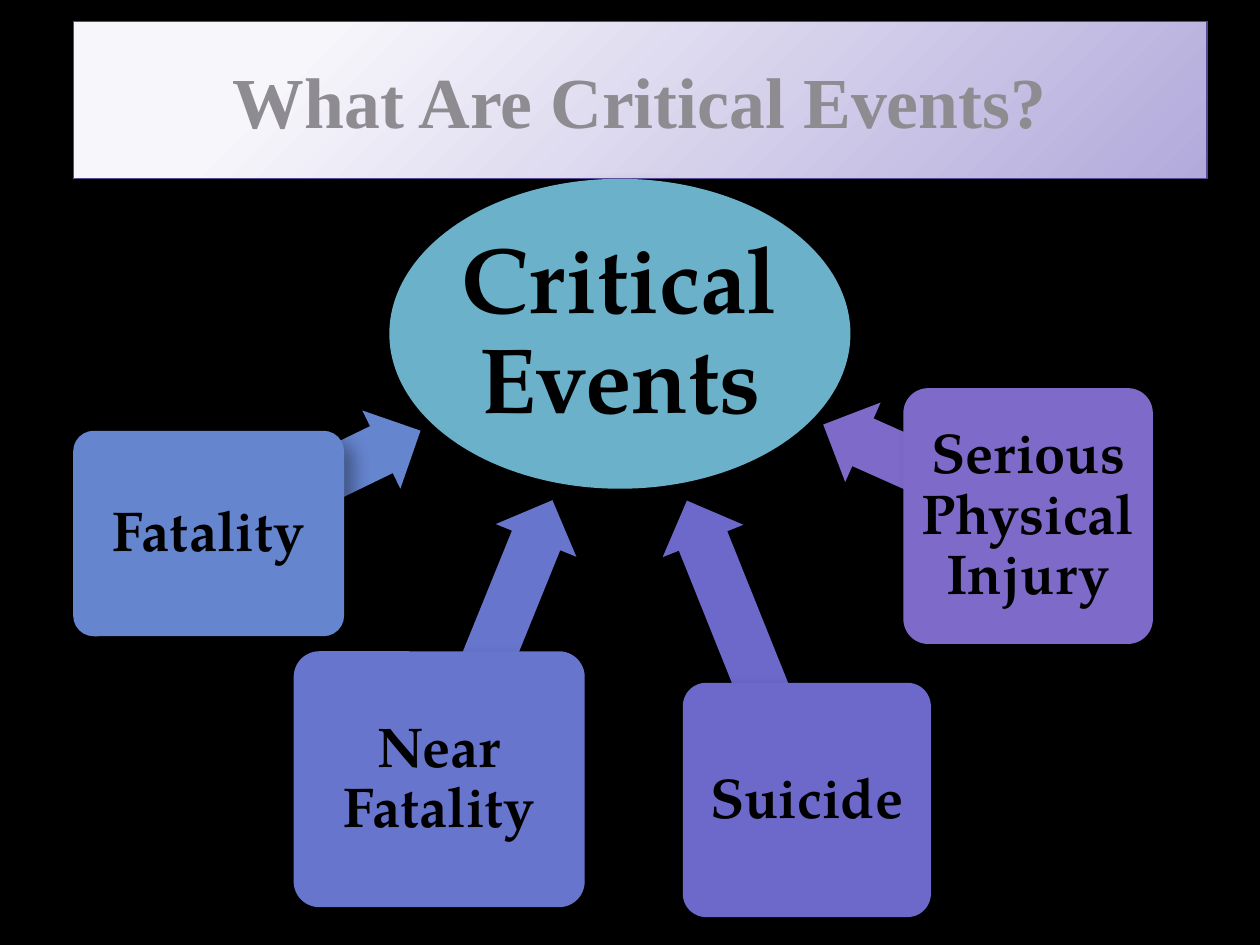
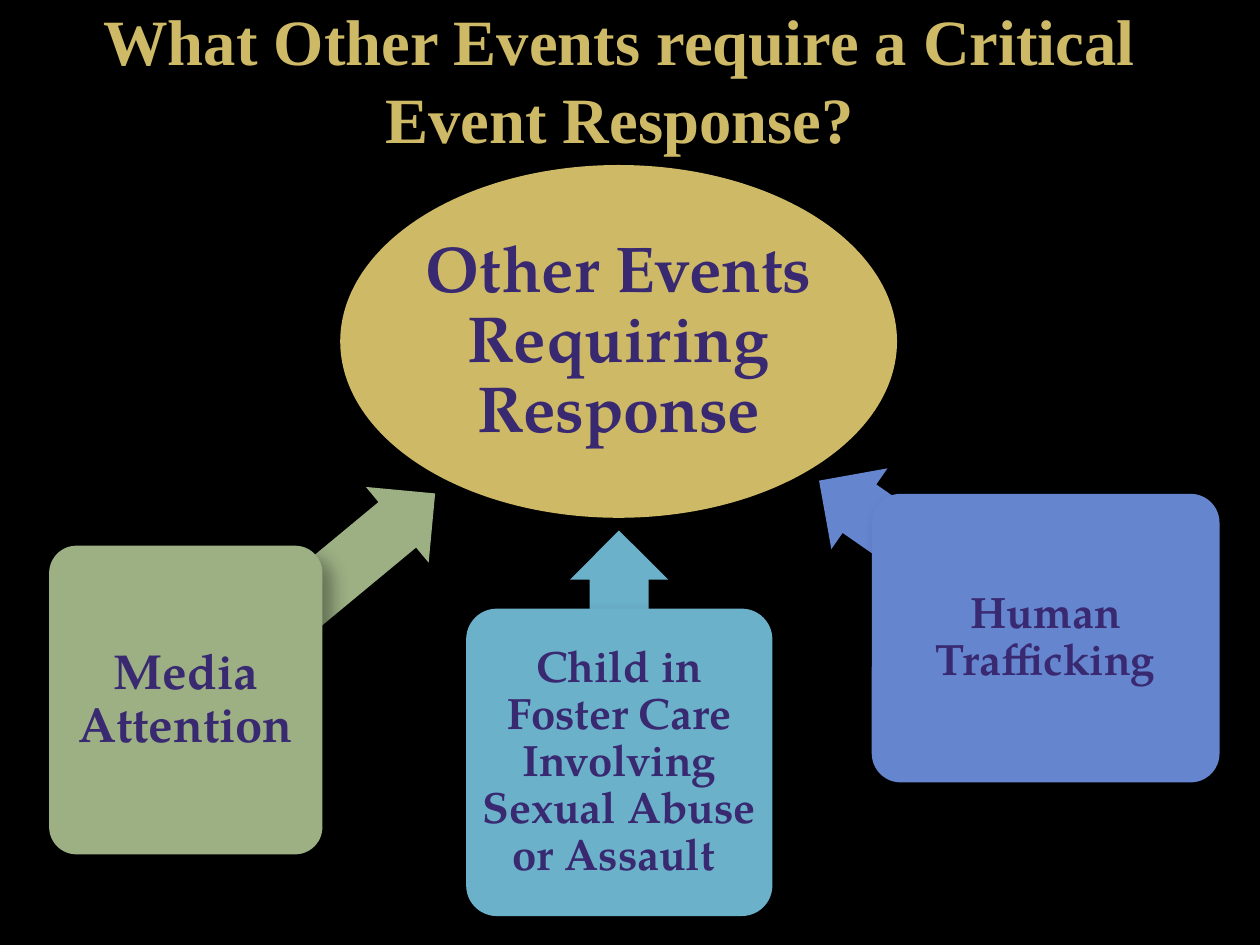
import math

import lxml.etree
import pptx
import pptx.dml.color
import pptx.enum.shapes
import pptx.enum.text
import pptx.oxml.ns
import pptx.util

Pt = pptx.util.Pt
SHAPES = pptx.enum.shapes.MSO_SHAPE

BACKGROUND = "000000"
TITLE_FONT = "Times New Roman"
DIAGRAM_FONT = "TeX Gyre Pagella"
TITLE_SIZE = (648, 90)
HUB_INSET, CARD_INSET = 0, 0.16  # shares of the font size

# Opacity in percent, blur and distance in points
CARD_SHADOW = (35, 10.2, 8)
ARROW_SHADOW = (26, 15, 18)

# Boxes are left, top, width, height. An arrow runs from its card's centre
# towards the hub's centre and has the given length.
SLIDES = [
    {
        "title": {"text": "What Are Critical Events?", "at": (41.8, 12.2),
                  "size": 41, "color": "8E8C91",
                  "band": {"stops": [(0.2, "F7F6FB"), (1, "B2AADB")], "line": "5A4A96"}},
        "text_color": "000000",
        "arrow_thickness": 49.7,
        "hub": {"text": "Critical Events", "box": (222.5, 102.2, 263.5, 177.1),
                "size": 53, "fill": "6BB1C9"},
        "cards": [
            {"text": "Fatality", "box": (41.8, 246.2, 154.8, 117.4),
             "size": 32, "fill": "6585CF", "arrow": 134.6},
            {"text": "Near Fatality", "box": (167.8, 372.2, 166.3, 146.2),
             "size": 32, "fill": "6775CD", "arrow": 172.1},
            {"text": "Suicide", "box": (390.2, 390.2, 141.8, 133.9),
             "size": 32, "fill": "6C69CB", "arrow": 184.3},
            {"text": "Serious Physical Injury", "box": (516.2, 221.8, 142.6, 146.2),
             "size": 32, "fill": "7E6BC9", "arrow": 128.2},
        ],
    },
    {
        "title": {"text": "What Other Events require a Critical Event Response?",
                  "at": (30.2, 0), "size": 36.9, "color": "CEB966", "band": None},
        "text_color": "382971",
        "arrow_thickness": 56.2,
        "hub": {"text": "Other Events Requiring Response",
                "box": (194.4, 94.3, 318.2, 201.6), "size": 37, "fill": "CEB966"},
        "cards": [
            {"text": "Media Attention", "box": (28.1, 311.8, 156.2, 176.4),
             "size": 28, "fill": "9CB084", "arrow": 185},
            {"text": "Child in Foster Care Involving Sexual Abuse or Assault ",
             "box": (266.4, 347.8, 175, 175.7),
             "size": 25, "fill": "6BB1C9", "arrow": 132.5},
            {"text": "Human Trafficking", "box": (498.2, 282.2, 198.7, 164.9),
             "size": 25, "fill": "6585CF", "arrow": 157.7},
        ],
    },
]


def rgb(color):
    return pptx.dml.color.RGBColor.from_string(color)


def add_child(parent, tag, **attributes):
    child = lxml.etree.SubElement(parent, pptx.oxml.ns.qn(tag))
    for name, value in attributes.items():
        child.set(name, str(value))
    return child


def set_shadow(shape, opacity, blur, distance):
    """Cast a black shadow to the lower right."""
    shape.shadow.inherit = False
    effects = shape._element.spPr.find(pptx.oxml.ns.qn("a:effectLst"))
    shadow = add_child(effects, "a:outerShdw", blurRad=int(Pt(blur)), dist=int(Pt(distance)),
                       dir=45 * 60000, algn="tl", rotWithShape=0)
    color = add_child(shadow, "a:srgbClr", val="000000")
    add_child(color, "a:alpha", val=opacity * 1000)


def write_text(shape, text, font_name, size, color, line_spacing):
    frame = shape.text_frame
    frame.text = text
    frame.word_wrap = True
    frame.auto_size = pptx.enum.text.MSO_AUTO_SIZE.NONE
    frame.vertical_anchor = pptx.enum.text.MSO_ANCHOR.MIDDLE
    paragraph = frame.paragraphs[0]
    paragraph.alignment = pptx.enum.text.PP_ALIGN.CENTER
    paragraph.line_spacing = line_spacing
    font = paragraph.font
    font.name, font.size, font.bold = font_name, Pt(size), True
    font.color.rgb = rgb(color)


def fill_band(shape, stops, line):
    """Fill with a gradient that spreads from the top left corner."""
    shape.fill.gradient()
    for stop, (position, color) in zip(shape.fill.gradient_stops, stops):
        stop.color.rgb = rgb(color)
        stop.position = position
    gradient = shape._element.spPr.find(pptx.oxml.ns.qn("a:gradFill"))
    gradient.remove(gradient.find(pptx.oxml.ns.qn("a:lin")))
    spread = add_child(gradient, "a:path", path="circle")
    add_child(spread, "a:fillToRect", l=-15000, t=-15000, r=115000, b=115000)
    shape.line.color.rgb = rgb(line)
    shape.line.width = Pt(0.75)
    set_shadow(shape, *CARD_SHADOW)


def format_title(shape, title):
    shape.left, shape.top = map(Pt, title["at"])
    shape.width, shape.height = map(Pt, TITLE_SIZE)
    write_text(shape, title["text"], TITLE_FONT, title["size"], title["color"], 1.0)
    if title["band"]:
        fill_band(shape, **title["band"])


def add_filled_shape(slide, kind, box, fill, shadow):
    shape = slide.shapes.add_shape(kind, *map(Pt, box))
    shape.fill.solid()
    shape.fill.fore_color.rgb = rgb(fill)
    shape.line.fill.background()
    set_shadow(shape, *shadow)
    return shape


def add_node(slide, kind, node, text_color, inset_share):
    shape = add_filled_shape(slide, kind, node["box"], node["fill"], CARD_SHADOW)
    write_text(shape, node["text"], DIAGRAM_FONT, node["size"], text_color, 0.9)
    frame = shape.text_frame
    inset = Pt(node["size"] * inset_share)
    frame.margin_left = frame.margin_top = frame.margin_right = frame.margin_bottom = inset
    return shape


def center(box):
    left, top, width, height = box
    return left + width / 2, top + height / 2


def add_arrow(slide, card, hub, thickness):
    card_x, card_y = center(card["box"])
    hub_x, hub_y = center(hub["box"])
    angle = math.atan2(card_y - hub_y, card_x - hub_x)
    length = card["arrow"]
    middle_x = card_x - math.cos(angle) * length / 2
    middle_y = card_y - math.sin(angle) * length / 2
    box = (middle_x - length / 2, middle_y - thickness / 2, length, thickness)
    arrow = add_filled_shape(slide, SHAPES.LEFT_ARROW, box, card["fill"], ARROW_SHADOW)
    arrow.adjustments[0], arrow.adjustments[1] = 0.6, 0.5
    arrow.rotation = math.degrees(angle)


def add_diagram_slide(presentation, content):
    slide = presentation.slides.add_slide(presentation.slide_layouts[5])
    format_title(slide.shapes.title, content["title"])
    hub, text_color = content["hub"], content["text_color"]
    add_node(slide, SHAPES.OVAL, hub, text_color, HUB_INSET)
    for card in content["cards"]:
        add_arrow(slide, card, hub, content["arrow_thickness"])
        shape = add_node(slide, SHAPES.ROUNDED_RECTANGLE, card, text_color, CARD_INSET)
        shape.adjustments[0] = 0.1


def main():
    presentation = pptx.Presentation()
    presentation.slide_width, presentation.slide_height = Pt(720), Pt(540)
    background = presentation.slide_master.background.fill
    background.solid()
    background.fore_color.rgb = rgb(BACKGROUND)
    for content in SLIDES:
        add_diagram_slide(presentation, content)
    presentation.save("out.pptx")


if __name__ == "__main__":
    main()
